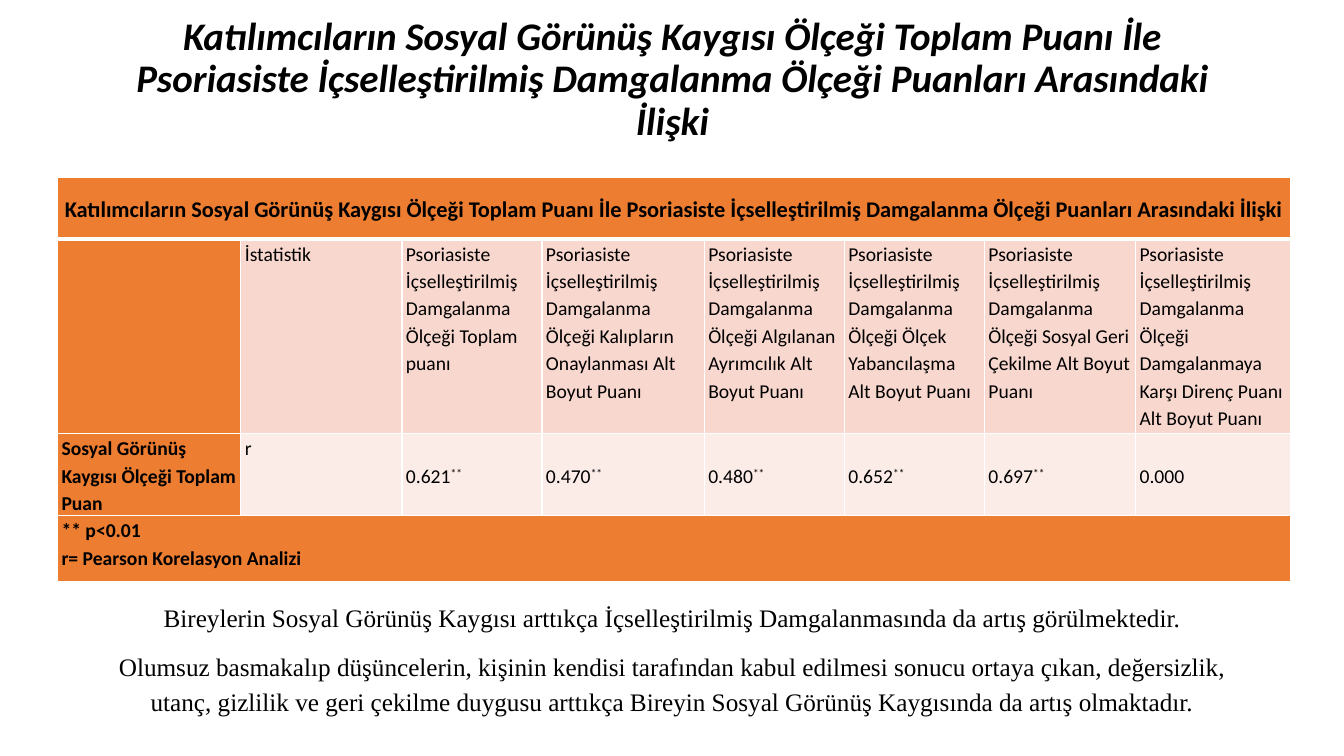
from dataclasses import dataclass
from lxml.etree import SubElement
from pptx import Presentation
from pptx.dml.color import RGBColor as RGB
from pptx.enum.text import MSO_ANCHOR as Anchor, MSO_AUTO_SIZE as Fit, PP_ALIGN as Align
from pptx.oxml.ns import qn
from pptx.util import Cm, Pt


@dataclass(frozen=True)
class Theme:
    ink: str = "000000"
    line: str = "FFFFFF"
    orange: str = "ED7D31"
    rose: str = "F8D7CE"
    pale: str = "FCECE8"
    sans: str = "Calibri"
    serif: str = "Times New Roman"
    title: float = 27.9
    head: int = 16
    cell: int = 14
    note: int = 18


theme = Theme()


def write(par, text, size=theme.cell, font=theme.sans, bold=False, italic=False,
          align=None, space=1.15, after=0, sup=False):
    run = par.add_run()
    run.text = text
    run.font.size, run.font.name = Pt(size), font
    run.font.bold, run.font.italic = bold, italic
    run.font.color.rgb = RGB.from_string(theme.ink)
    if sup:
        run.font._element.set("baseline", "30000")
    par.alignment, par.line_spacing, par.space_after = align, space, Pt(after)
    par.space_before = Pt(0)


def paint(cell, fill, top=1, base=1):
    # Borders come before the fill in the cell properties
    props = cell._tc.get_or_add_tcPr()
    for side, width in (("L", 1), ("R", 1), ("T", top), ("B", base)):
        edge = SubElement(props, qn(f"a:ln{side}"), w=str(Pt(width)))
        solid = SubElement(edge, qn("a:solidFill"))
        SubElement(solid, qn("a:srgbClr"), val=theme.line)
    cell.fill.solid()
    cell.fill.fore_color.rgb = RGB.from_string(fill)
    cell.margin_left = cell.margin_right = Cm(0.1)
    cell.margin_top = cell.margin_bottom = 0


deck = Presentation()
deck.slide_width, deck.slide_height = Cm(33.87), Cm(19.05)
slide = deck.slides.add_slide(deck.slide_layouts[5])

# Title
topic = ("Katılımcıların Sosyal Görünüş Kaygısı Ölçeği Toplam Puanı İle Psoriasiste "
         "İçselleştirilmiş Damgalanma Ölçeği Puanları Arasındaki İlişki")
title = slide.shapes.title
title.left, title.top, title.width, title.height = Cm(2.34), Cm(1.02), Cm(29.21), Cm(3.68)
frame = title.text_frame
frame.auto_size, frame.word_wrap = Fit.NONE, True
frame.vertical_anchor, frame.margin_bottom = Anchor.MIDDLE, Cm(1.8)
write(frame.paragraphs[0], topic, size=theme.title, bold=True, italic=True,
      align=Align.CENTER, space=0.9)

# Table data: scale name and its correlation
scale = "Psoriasiste İçselleştirilmiş Damgalanma Ölçeği "
data = [
    ("Toplam puanı", "0.621", "**"),
    ("Kalıpların Onaylanması Alt Boyut Puanı", "0.470", "**"),
    ("Algılanan Ayrımcılık Alt Boyut Puanı", "0.480", "**"),
    ("Ölçek Yabancılaşma Alt Boyut Puanı", "0.652", "**"),
    ("Sosyal Geri Çekilme Alt Boyut Puanı", "0.697", "**"),
    ("Damgalanmaya Karşı Direnç Puanı Alt Boyut Puanı", "0.000", ""),
]
wide = [4.62, 4.06, 3.53, 4.09, 3.53, 3.53, 3.81, 3.91]
high = [1.55, 4.9, 1.65, 1.65]

# Table grid
table = slide.shapes.add_table(len(high), len(wide), Cm(1.45), Cm(4.47),
                               Cm(sum(wide)), Cm(sum(high))).table
for col, size in zip(table.columns, wide):
    col.width = Cm(size)
for row, size in zip(table.rows, high):
    row.height = Cm(size)
fills = [theme.orange, theme.rose, theme.pale, theme.orange]
for y, fill in enumerate(fills):
    for x in range(len(wide)):
        paint(table.cell(y, x), fill if x else theme.orange,
              top=3 if y == 1 else 1, base=3 if y == 0 else 1)
for y in (0, 3):
    table.cell(y, 0).merge(table.cell(y, len(wide) - 1))

# Table heading and row labels
head = table.cell(0, 0)
head.vertical_anchor = Anchor.MIDDLE
write(head.text_frame.paragraphs[0], topic, size=theme.head, bold=True, align=Align.CENTER)
for y, x, text, bold in ((1, 1, "İstatistik", False), (2, 1, "r", False),
                         (2, 0, "Sosyal Görünüş Kaygısı Ölçeği Toplam Puan", True)):
    write(table.cell(y, x).text_frame.paragraphs[0], text, bold=bold)

# Scales and values
for x, (name, value, mark) in enumerate(data, 2):
    write(table.cell(1, x).text_frame.paragraphs[0], scale + name)
    cell = table.cell(2, x)
    cell.vertical_anchor = Anchor.MIDDLE
    par = cell.text_frame.paragraphs[0]
    write(par, value)
    if mark:
        write(par, mark, sup=True)

# Table key
key = table.cell(3, 0).text_frame
write(key.paragraphs[0], "** p<0.01", bold=True)
write(key.add_paragraph(), "r= Pearson Korelasyon Analizi", bold=True)

# Findings below the table
box = slide.shapes.add_textbox(Cm(2.34), Cm(14.94), Cm(29.21), Cm(3.2)).text_frame
box.word_wrap, box.auto_size = True, Fit.SHAPE_TO_FIT_TEXT
notes = [
    "Bireylerin Sosyal Görünüş Kaygısı arttıkça İçselleştirilmiş Damgalanmasında da artış "
    "görülmektedir.",
    "Olumsuz basmakalıp düşüncelerin, kişinin kendisi tarafından kabul edilmesi sonucu ortaya "
    "çıkan, değersizlik, utanç, gizlilik ve geri çekilme duygusu arttıkça Bireyin Sosyal "
    "Görünüş Kaygısında da artış olmaktadır.",
]
for i, text in enumerate(notes):
    par = box.add_paragraph() if i else box.paragraphs[0]
    write(par, text, size=theme.note, font=theme.serif, align=Align.CENTER, after=10)

deck.save("out.pptx")
